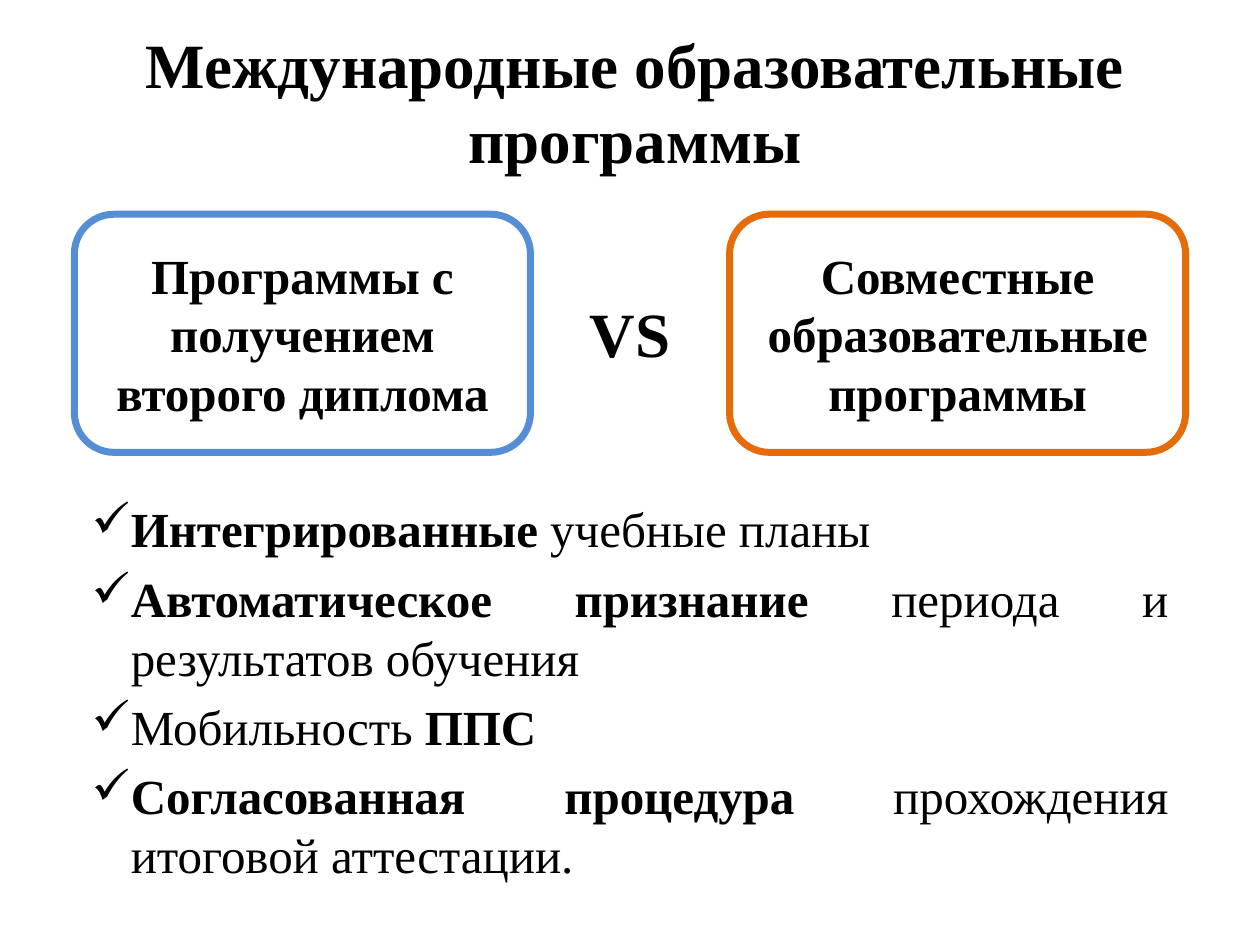
from lxml.etree import SubElement
from pptx import Presentation
from pptx.dml.color import RGBColor
from pptx.enum.shapes import MSO_SHAPE
from pptx.enum.text import MSO_ANCHOR, PP_ALIGN
from pptx.oxml.ns import qn
from pptx.util import Inches, Pt

COLOURS = {"text": "000000", "double": "558ED5", "joint": "E46C0A"}
FONT = "Times New Roman"
TITLE_SIZE, BODY_SIZE = Pt(36), Pt(28)
INDENT = Inches(0.31)

FEATURES = [
    [("Интегрированные", True), (" учебные планы", False)],
    [("Автоматическое признание ", True), ("периода и результатов обучения", False)],
    [("Мобильность ", False), ("ППС", True)],
    [("Согласованная процедура ", True), ("прохождения итоговой аттестации.", False)],
]


def colour(name):
    return RGBColor.from_string(COLOURS[name])


def write_spans(para, spans, size, align):
    para.alignment = align
    for text, bold in spans:
        span = para.add_run()
        span.text = text
        for key, value in {"name": FONT, "size": size, "bold": bold}.items():
            setattr(span.font, key, value)
        span.font.color.rgb = colour("text")


def add_bullet(para):
    props = para._p.get_or_add_pPr()
    props.set("marL", str(INDENT))
    props.set("indent", str(-INDENT))
    SubElement(props, qn("a:buChar")).set("char", "✓")


def add_label(page, box, text, anchor):
    frame = page.shapes.add_textbox(*box).text_frame
    for key, value in {"word_wrap": True, "vertical_anchor": anchor}.items():
        setattr(frame, key, value)
    write_spans(frame.paragraphs[0], [(text, True)], TITLE_SIZE, PP_ALIGN.CENTER)


def add_card(page, box, text, outline):
    card = page.shapes.add_shape(MSO_SHAPE.ROUNDED_RECTANGLE, *box)
    card.shadow.inherit = False
    card.fill.background()
    card.line.color.rgb = colour(outline)
    card.line.width = Pt(4)
    frame = card.text_frame
    for key, value in {"word_wrap": True, "vertical_anchor": MSO_ANCHOR.MIDDLE}.items():
        setattr(frame, key, value)
    write_spans(frame.paragraphs[0], [(text, True)], BODY_SIZE, PP_ALIGN.CENTER)


def add_comparison(page, box):
    left, top, width, height = box
    card_width = Inches(3.62)
    add_card(page, (left, top, card_width, height),
             "Программы с получением второго диплома", "double")
    add_card(page, (left + width - card_width, top, card_width, height),
             "Совместные образовательные программы", "joint")
    label_width, label_height = Inches(1.1), Inches(0.71)
    label_box = (left + (width - label_width) // 2,
                 top + (height - label_height) // 2, label_width, label_height)
    add_label(page, label_box, "VS", MSO_ANCHOR.TOP)


def add_features(page, box):
    frame = page.shapes.add_textbox(*box).text_frame
    frame.word_wrap = True
    for index, spans in enumerate(FEATURES):
        para = frame.add_paragraph() if index else frame.paragraphs[0]
        para.space_after = Pt(6)
        write_spans(para, spans, BODY_SIZE, PP_ALIGN.JUSTIFY)
        add_bullet(para)


def main():
    deck = Presentation()
    deck.slide_width, deck.slide_height = Inches(10), Inches(7.5)
    page = deck.slides.add_slide(deck.slide_layouts[6])
    add_label(page, (Inches(0.51), Inches(0.13), Inches(9.06), Inches(1.34)),
              "Международные образовательные программы", MSO_ANCHOR.MIDDLE)
    add_features(page, (Inches(0.63), Inches(3.91), Inches(8.74), Inches(3.18)))
    add_comparison(page, (Inches(0.59), Inches(1.7), Inches(8.82), Inches(1.89)))
    deck.save("out.pptx")


if __name__ == "__main__":
    main()
